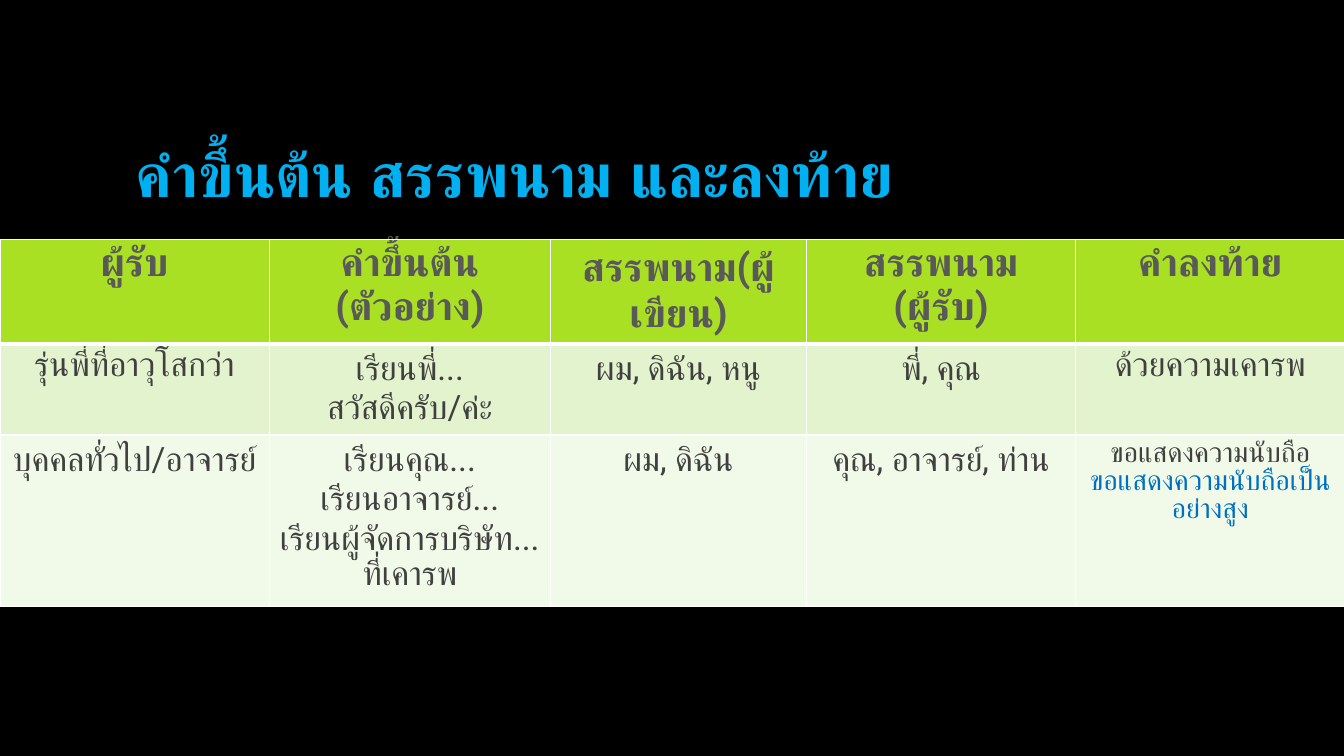
from dataclasses import dataclass

from lxml import etree
from pptx import Presentation
from pptx.dml.color import RGBColor
from pptx.enum.text import MSO_ANCHOR, PP_ALIGN
from pptx.oxml.ns import qn
from pptx.util import Inches, Pt

MIDDLE = MSO_ANCHOR.MIDDLE
CENTER = PP_ALIGN.CENTER


@dataclass(frozen=True)
class Theme:
    font: str = "Roboto"
    back: str = "000000"
    title: str = "00B0F0"
    head: str = "595959"
    body: str = "404040"
    accent: str = "0070C0"
    line: str = "FFFFFF"
    fills: tuple = ("A9E023", "E2F3CD", "F1F9E8")
    title_size: int = 44
    head_size: int = 28
    body_size: int = 24
    small_size: int = 20


class Deck:
    def __init__(self, theme):
        self.theme = theme
        self.show = Presentation()
        self.show.slide_width = Inches(13.33)
        self.show.slide_height = Inches(7.5)
        self.slide = self.show.slides.add_slide(self.show.slide_layouts[6])
        fill = self.slide.background.fill
        fill.solid()
        fill.fore_color.rgb = RGBColor.from_string(theme.back)

    def style(self, para, size, color, bold=False):
        font = para.font
        font.name = self.theme.font
        font.size = Pt(size)
        font.bold = bold
        font.color.rgb = RGBColor.from_string(color)

    def title(self, text, left, top, width, height):
        box = self.slide.shapes.add_textbox(
            Inches(left), Inches(top), Inches(width), Inches(height))
        frame = box.text_frame
        frame.word_wrap = True
        frame.vertical_anchor = MIDDLE
        frame.text = text
        self.style(frame.paragraphs[0], self.theme.title_size, self.theme.title, True)

    def border(self, cell, side, width):
        props = cell._tc.get_or_add_tcPr()
        line = etree.SubElement(props, qn(f"a:ln{side}"), w=str(Pt(width)))
        fill = etree.SubElement(line, qn("a:solidFill"))
        etree.SubElement(fill, qn("a:srgbClr"), val=self.theme.line)

    def cell(self, cell, text, row):
        theme = self.theme
        for side in "LRTB":
            thick = (row, side) in ((0, "B"), (1, "T"))
            self.border(cell, side, 3 if thick else 1)
        cell.fill.solid()
        cell.fill.fore_color.rgb = RGBColor.from_string(theme.fills[row])
        cell.text = text
        for para in cell.text_frame.paragraphs:
            para.alignment = CENTER
            if row == 0:
                self.style(para, theme.head_size, theme.head, True)
            else:
                self.style(para, theme.body_size, theme.body)

    def table(self, rows, left, top, widths, heights):
        frame = self.slide.shapes.add_table(
            len(rows), len(widths), Inches(left), Inches(top),
            Inches(sum(widths)), Inches(sum(heights)))
        table = frame.table
        for column, width in zip(table.columns, widths):
            column.width = Inches(width)
        for row, height in zip(table.rows, heights):
            row.height = Inches(height)
        for row, texts in enumerate(rows):
            for col, text in enumerate(texts):
                self.cell(table.cell(row, col), text, row)
        return table


ROWS = [
    ["ผู้รับ", "คำขึ้นต้น\n(ตัวอย่าง)", "สรรพนาม(ผู้เขียน)",
     "สรรพนาม\n(ผู้รับ)", "คำลงท้าย"],
    ["รุ่นพี่ที่อาวุโสกว่า", "เรียนพี่...\nสวัสดีครับ/ค่ะ",
     "ผม, ดิฉัน, หนู", "พี่, คุณ", "ด้วยความเคารพ"],
    ["บุคคลทั่วไป/อาจารย์",
     "เรียนคุณ...\nเรียนอาจารย์...\nเรียนผู้จัดการบริษัท...\nที่เคารพ",
     "ผม, ดิฉัน", "คุณ, อาจารย์, ท่าน",
     "ขอแสดงความนับถือ\nขอแสดงความนับถือเป็นอย่างสูง"],
]


def main():
    theme = Theme()
    deck = Deck(theme)
    deck.title("คำขึ้นต้น สรรพนาม และลงท้าย", 1.25, 0.67, 10.83, 2.08)
    table = deck.table(ROWS, 0, 2.38, [2.67, 2.79, 2.54, 2.67, 2.67],
                       [1.01, 0.89, 1.61])
    closing = table.cell(2, 4).text_frame.paragraphs
    for para, color in zip(closing, (theme.body, theme.accent)):
        deck.style(para, theme.small_size, color)
    deck.show.save("out.pptx")


if __name__ == "__main__":
    main()
